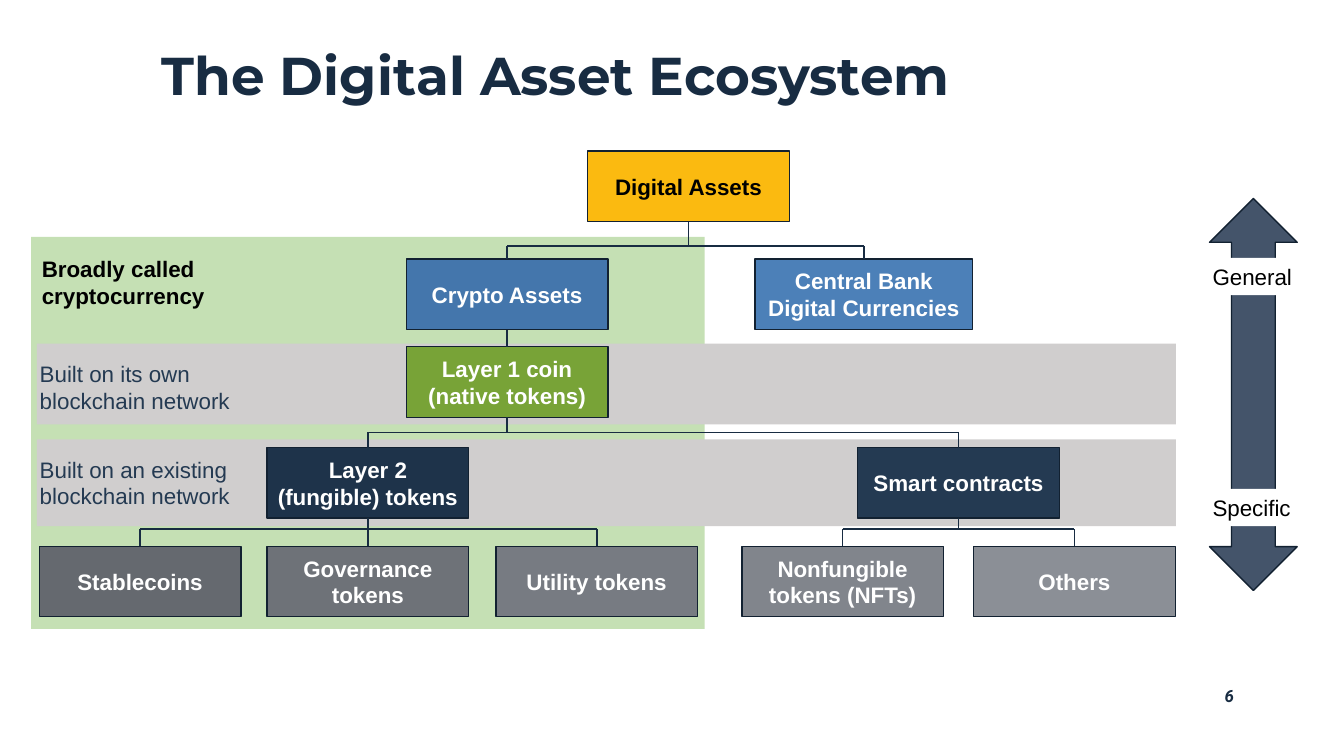
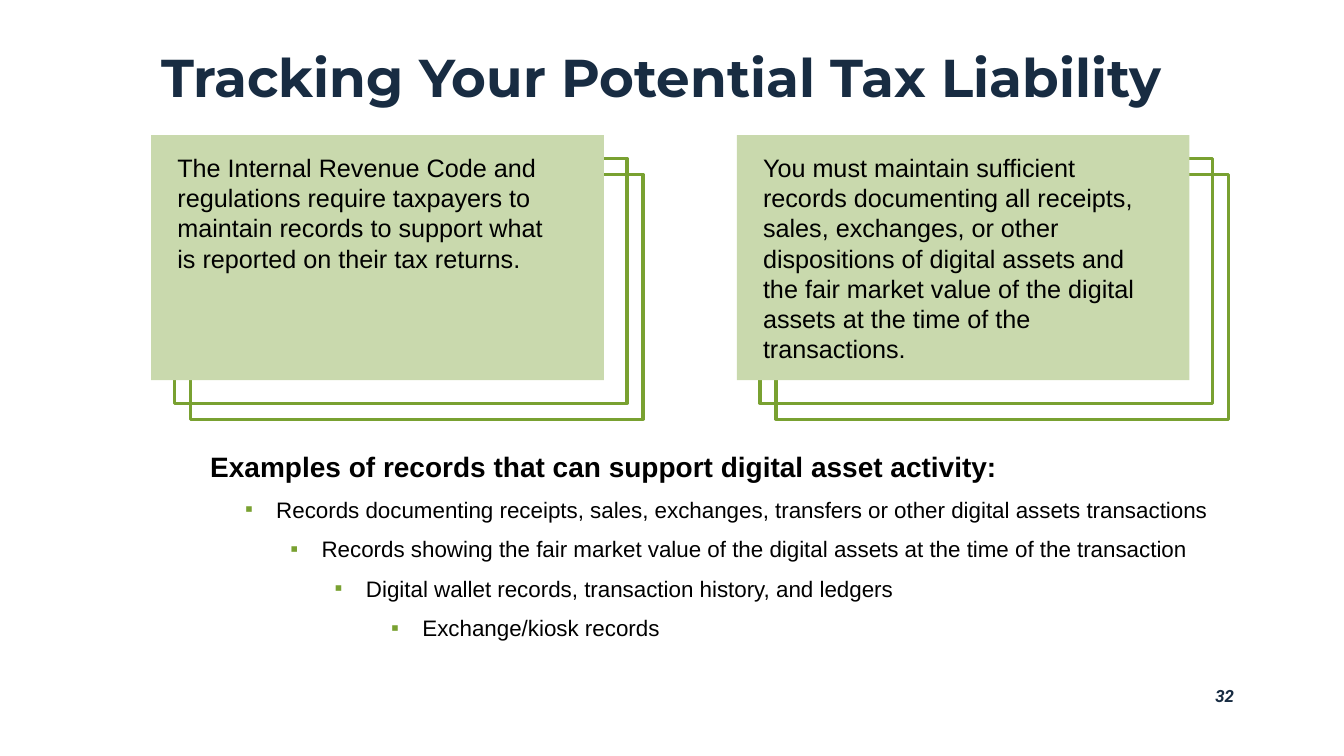
from dataclasses import dataclass

from lxml.etree import SubElement
from pptx import Presentation
from pptx.dml.color import RGBColor
from pptx.enum.shapes import MSO_CONNECTOR, MSO_SHAPE
from pptx.enum.text import MSO_ANCHOR, MSO_AUTO_SIZE, PP_ALIGN
from pptx.oxml.ns import qn
from pptx.util import Pt


@dataclass(frozen=True)
class Theme:
    """Colours, fonts and type sizes of the deck."""
    navy: str = "182C42"
    slate: str = "243A52"
    outline: str = "122131"
    black: str = "000000"
    white: str = "FFFFFF"
    gold: str = "FBBA10"
    crypto_blue: str = "4476AC"
    bank_blue: str = "4C80B8"
    coin_green: str = "78A337"
    layer_navy: str = "1E334A"
    leaf_greys: tuple = ("65696F", "6E7278", "777B82", "81858C", "8B8F96")
    panel_green: str = "C5E0B4"
    band_grey: str = "D0CECE"
    arrow_grey: str = "44546A"
    card_green: str = "C9D9AD"
    accent_green: str = "79A131"
    title_font: str = "Montserrat"
    text_font: str = "Arial"
    number_font: str = "Roboto"
    title_size: float = 38
    heading_size: float = 20
    card_size: float = 18
    text_size: float = 16
    number_size: float = 12


@dataclass(frozen=True)
class Box:
    """A rectangle in points."""
    left: float
    top: float
    width: float
    height: float

    def inner(self, left, top, width, height):
        """Return a box measured from this one's top left corner."""
        return Box(self.left + left, self.top + top, width, height)

    def lengths(self):
        """Return left, top, width and height as slide lengths."""
        return Pt(self.left), Pt(self.top), Pt(self.width), Pt(self.height)


THEME = Theme()
TITLE_LAYOUT, LIST_LAYOUT = 5, 1
NODE_WIDTH, NODE_HEIGHT = 144, 50.4


def write(para, text, size=THEME.text_size, color=THEME.black, font=THEME.text_font,
          bold=False, italic=False):
    """Add text to a paragraph, one run for each line."""
    for index, line in enumerate(text.split("\n")):
        if index:
            para.add_line_break()
        span = para.add_run()
        span.text = line
        span.font.name = font
        span.font.size = Pt(size)
        span.font.bold = bold
        span.font.italic = italic
        span.font.color.rgb = RGBColor.from_string(color)


def prepare(frame, anchor=MSO_ANCHOR.TOP, align=PP_ALIGN.LEFT):
    """Set wrapping and alignment, and return the first paragraph."""
    frame.word_wrap = True
    frame.auto_size = MSO_AUTO_SIZE.NONE
    frame.vertical_anchor = anchor
    para = frame.paragraphs[0]
    para.alignment = align
    return para


def place(shape, box):
    """Move and size a shape to a box."""
    shape.left, shape.top, shape.width, shape.height = box.lengths()


def add_label(page, box, text, anchor=MSO_ANCHOR.TOP, align=PP_ALIGN.LEFT, **style):
    """Add a text box."""
    label = page.shapes.add_textbox(*box.lengths())
    write(prepare(label.text_frame, anchor, align), text, **style)


def add_block(page, box, fill=None, line=None, weight=1, kind=MSO_SHAPE.RECTANGLE):
    """Add a plain shape with an optional fill and outline."""
    block = page.shapes.add_shape(kind, *box.lengths())
    block.shadow.inherit = False
    if fill:
        block.fill.solid()
        block.fill.fore_color.rgb = RGBColor.from_string(fill)
    else:
        block.fill.background()
    if line:
        block.line.color.rgb = RGBColor.from_string(line)
        block.line.width = Pt(weight)
    else:
        block.line.fill.background()
    return block


def add_page(deck, layout, title, title_box, number):
    """Add a slide with its title and page number."""
    page = deck.slides.add_slide(deck.slide_layouts[layout])
    place(page.shapes.title, title_box)
    para = prepare(page.shapes.title.text_frame, MSO_ANCHOR.BOTTOM)
    para.line_spacing = 0.9
    write(para, title, THEME.title_size, THEME.navy, THEME.title_font, bold=True)
    add_label(page, Box(774.7, 486, 113.8, 27.4), number, align=PP_ALIGN.RIGHT,
              size=THEME.number_size, color=THEME.navy, font=THEME.number_font,
              bold=True, italic=True)
    return page


def add_node(page, box, text, fill, color=THEME.white):
    """Add a box of the tree."""
    node = add_block(page, box, fill, THEME.outline)
    para = prepare(node.text_frame, MSO_ANCHOR.MIDDLE, PP_ALIGN.CENTER)
    write(para, text, color=color, bold=True)
    return node


def add_link(page, start, end, parent=None, child=None):
    """Draw a line, joined to a parent's bottom or a child's top."""
    link = page.shapes.add_connector(MSO_CONNECTOR.STRAIGHT, *start, *end)
    link.line.color.rgb = RGBColor.from_string(THEME.navy)
    link.line.width = Pt(1.25)
    SubElement(link._element.spPr, qn("a:effectLst"))
    if parent is not None:
        link.begin_connect(parent, 2)
    if child is not None:
        link.end_connect(child, 0)


def add_branch(page, parent, children, bus_top):
    """Link a parent to its children through a horizontal bus."""
    def center(node):
        return node.left + node.width // 2

    trunk, bus = center(parent), Pt(bus_top)
    base = parent.top + parent.height
    aligned = [child for child in children if abs(center(child) - trunk) < Pt(1)]
    for child in children:
        middle = center(child)
        if child in aligned:
            add_link(page, (trunk, base), (middle, child.top), parent, child)
        else:
            add_link(page, (middle, bus), (middle, child.top), child=child)
    if not aligned:
        add_link(page, (trunk, base), (trunk, bus), parent)
    if len(children) > 1:
        ends = [center(child) for child in children]
        add_link(page, (min(ends), bus), (max(ends), bus))


def add_backdrop(page, area):
    """Draw the cryptocurrency panel and the two network bands."""
    add_block(page, area.inner(0.3, 61.2, 481, 280), THEME.panel_green)
    add_label(page, area.inner(0.8, 70, 242, 46), "Broadly called\ncryptocurrency",
              MSO_ANCHOR.BOTTOM, bold=True)
    bands = ((137.5, 57.6, "Built on its own\nblockchain network"),
             (205.9, 61.9, "Built on an existing\nblockchain network"))
    for top, height, text in bands:
        band = area.inner(4.3, top, 813.6, height)
        add_block(page, band, THEME.band_grey)
        add_label(page, band.inner(-5, 7.5, 156, 46), text, MSO_ANCHOR.BOTTOM,
                  color=THEME.slate)


def add_tree(page, area):
    """Draw the tree of digital assets."""
    def node(left, top, text, fill, color=THEME.white, width=NODE_WIDTH):
        return add_node(page, area.inner(left, top, width, NODE_HEIGHT), text, fill, color)

    add_backdrop(page, area)
    assets = node(397.8, 0, "Digital Assets", THEME.gold, THEME.black)
    crypto = node(268.2, 77, "Crypto Assets", THEME.crypto_blue)
    bank = node(517.3, 77, "Central Bank Digital Currencies", THEME.bank_blue, width=155.5)
    coin = node(268.2, 139.7, "Layer 1 coin (native tokens)", THEME.coin_green)
    tokens = node(168.8, 211.7, "Layer 2 (fungible) tokens", THEME.layer_navy)
    contracts = node(590.7, 211.7, "Smart contracts", THEME.slate)
    leaf_texts = ("Stablecoins", "Governance tokens", "Utility tokens",
                  "Nonfungible tokens (NFTs)", "Others")
    leaf_lefts = (6.1, 168.8, 332.2, 507.9, 673.5)
    leaves = [node(left, 282.2, text, fill)
              for left, text, fill in zip(leaf_lefts, leaf_texts, THEME.leaf_greys)]
    branches = ((assets, [crypto, bank], 67.7), (crypto, [coin], 0),
                (coin, [tokens, contracts], 200.9),
                (tokens, leaves[:3], 270), (contracts, leaves[3:], 270))
    for parent, children, bus_top in branches:
        add_branch(page, parent, children, area.top + bus_top)


def add_scale(page, area):
    """Draw the arrow from general to specific."""
    add_block(page, area.inner(5, 0, 62.6, area.height), THEME.arrow_grey, THEME.outline,
              kind=MSO_SHAPE.UP_DOWN_ARROW)
    for top, text in ((42.5, "General"), (207.4, "Specific")):
        tag = add_block(page, area.inner(0, top, area.width, 26.6), THEME.white)
        write(prepare(tag.text_frame, MSO_ANCHOR.BOTTOM), text)


def add_card(page, card, text):
    """Draw a card in front of two offset outlines."""
    for offset in (16.6, 28):
        add_block(page, card.inner(offset, offset, card.width, card.height),
                  line=THEME.accent_green, weight=2.25)
    front = add_block(page, card, THEME.card_green)
    frame = front.text_frame
    frame.margin_left, frame.margin_top, frame.margin_right = Pt(18.7), Pt(12.2), Pt(34.6)
    write(prepare(frame), text, THEME.card_size)


def add_records(page, area, heading, records):
    """Write the heading and the stepped list of records."""
    add_label(page, area.inner(0, 0, 862.6, 31.7), heading, align=PP_ALIGN.CENTER,
              size=THEME.heading_size, bold=True)
    body = page.placeholders[1]
    place(body, area.inner(167.8, 33.1, 740, 112))
    first = prepare(body.text_frame)
    for level, (step, text) in enumerate(records):
        para = body.text_frame.add_paragraph() if level else first
        para.level = level
        properties = para._p.get_or_add_pPr()
        properties.set("marL", str(Pt(step + 22.3)))
        properties.set("indent", str(Pt(-22.3)))
        tint = SubElement(properties, qn("a:buClr"))
        SubElement(tint, qn("a:srgbClr"), val=THEME.accent_green)
        SubElement(properties, qn("a:buFont"), typeface=THEME.text_font)
        SubElement(properties, qn("a:buChar"), char="▪")
        para.alignment = PP_ALIGN.LEFT
        para.space_before = Pt(9 if level else 0)
        write(para, text)


def build_ecosystem(deck):
    """Build the slide on the digital asset ecosystem."""
    page = add_page(deck, TITLE_LAYOUT, "The Digital Asset Ecosystem",
                    Box(108, 6.5, 780.5, 73.4), "6")
    add_tree(page, Box(22, 108, 818, 342))
    add_scale(page, Box(859, 141.8, 73.4, 280))


def build_tracking(deck):
    """Build the slide on tracking tax liability."""
    page = add_page(deck, LIST_LAYOUT, "Tracking Your Potential Tax Liability",
                    Box(108, 8, 780.5, 73.4), "32")
    cards = ("The Internal Revenue Code and regulations require taxpayers to maintain "
             "records to support what is reported on their tax returns.",
             "You must maintain sufficient records documenting all receipts, sales, "
             "exchanges, or other dispositions of digital assets and the fair market "
             "value of the digital assets at the time of the transactions.")
    for index, text in enumerate(cards):
        add_card(page, Box(108 + 418.3 * index, 96.5, 323.3, 175), text)
    records = ((0, "Records documenting receipts, sales, exchanges, transfers or other "
                   "digital assets transactions"),
               (32.4, "Records showing the fair market value of the digital assets at "
                      "the time of the transaction"),
               (64.1, "Digital wallet records, transaction history, and ledgers"),
               (104.4, "Exchange/kiosk records"))
    add_records(page, Box(0, 317.5, 960, 146),
                "Examples of records that can support digital asset activity:", records)


def main():
    """Build and save the deck."""
    deck = Presentation()
    deck.slide_width, deck.slide_height = Pt(960), Pt(540)
    build_ecosystem(deck)
    build_tracking(deck)
    deck.save("out.pptx")


if __name__ == "__main__":
    main()
